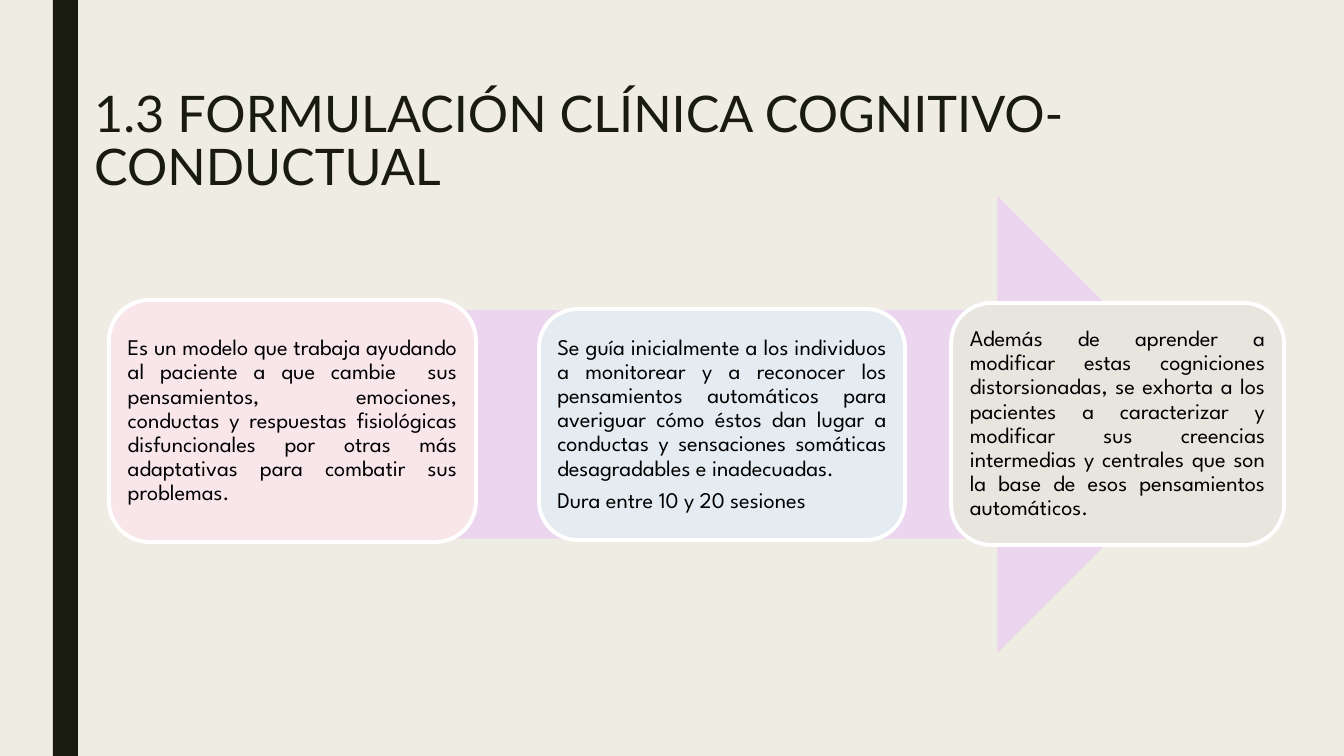
from pptx import Presentation
from pptx.dml.color import RGBColor
from pptx.enum.shapes import MSO_SHAPE
from pptx.enum.text import MSO_ANCHOR, MSO_AUTO_SIZE, PP_ALIGN
from pptx.util import Emu, Pt

RECT, ARROW, ROUND = MSO_SHAPE.RECTANGLE, MSO_SHAPE.RIGHT_ARROW, MSO_SHAPE.ROUNDED_RECTANGLE
TOP, MIDDLE = MSO_ANCHOR.TOP, MSO_ANCHOR.MIDDLE
LEFT, JUSTIFY = PP_ALIGN.LEFT, PP_ALIGN.JUSTIFY
NO_FIT = MSO_AUTO_SIZE.NONE

COLORS = {"back": "EFEDE3", "dark": "191B0E", "arrow": "EBD5EF", "rose": "F9E6EA",
          "blue": "E4ECF1", "sand": "E8E5DF", "edge": "FFFFFF", "text": "000000"}
SCALE = 914400 / 100.8


def px(n):
    return Emu(round(n * SCALE))


def add_part(kind, box, color):
    part = slide.shapes.add_shape(kind, *map(px, box))
    part.shadow.inherit = False
    part.fill.solid()
    part.fill.fore_color.rgb = RGBColor.from_string(COLORS[color])
    part.line.fill.background()
    return part


prs = Presentation()
prs.slide_width, prs.slide_height = px(1344), px(756)
slide = prs.slides.add_slide(prs.slide_layouts[5])

# Background and side bar
slide.background.fill.solid()
slide.background.fill.fore_color.rgb = RGBColor.from_string(COLORS["back"])
add_part(RECT, (53, 0, 25, 756), "dark")

# Title
title = slide.shapes.title
title.left, title.top, title.width, title.height = map(px, (84, 84, 1243, 87))
frame = title.text_frame
frame.word_wrap = True
frame.auto_size = NO_FIT
frame.vertical_anchor = TOP
para = frame.paragraphs[0]
para.alignment = LEFT
para.line_spacing = 0.89
run = para.add_run()
run.text = "1.3 FORMULACIÓN CLÍNICA COGNITIVO-CONDUCTUAL"
run.font.name, run.font.size = "Lato", Pt(36)
run.font.color.rgb = RGBColor.from_string(COLORS["dark"])

# Arrow behind the steps
add_part(ARROW, (212, 196, 1014, 457), "arrow")

# Steps: box, color, paragraphs
steps = [
    ((109, 300, 367, 242), "rose", [
        "Es un modelo que trabaja ayudando al paciente a que cambie  sus pensamientos, "
        "emociones, conductas y respuestas fisiológicas disfuncionales por otras más "
        "adaptativas para combatir sus problemas."]),
    ((539, 309, 366, 231), "blue", [
        "Se guía inicialmente a los individuos a monitorear y a reconocer los pensamientos "
        "automáticos para averiguar cómo éstos dan lugar a conductas y sensaciones "
        "somáticas desagradables e inadecuadas.",
        "Dura entre 10 y 20 sesiones"]),
    ((951, 303, 333, 242), "sand", [
        "Además de aprender a modificar estas cogniciones distorsionadas, se exhorta a los "
        "pacientes a caracterizar y modificar sus creencias intermedias y centrales que son "
        "la base de esos pensamientos automáticos."]),
]
for box, color, texts in steps:
    step = add_part(ROUND, box, color)
    step.line.color.rgb = RGBColor.from_string(COLORS["edge"])
    step.line.width = Pt(2.75)
    frame = step.text_frame
    frame.word_wrap = True
    frame.vertical_anchor = MIDDLE
    frame.margin_left = frame.margin_right = px(7)
    frame.margin_top = frame.margin_bottom = px(7)
    for i, text in enumerate(texts):
        para = frame.add_paragraph() if i else frame.paragraphs[0]
        para.alignment = JUSTIFY
        para.line_spacing = 0.9
        para.space_after = Pt(5.6)
        run = para.add_run()
        run.text = text
        run.font.name, run.font.size = "League Spartan", Pt(16)
        run.font.color.rgb = RGBColor.from_string(COLORS["text"])

prs.save("out.pptx")
